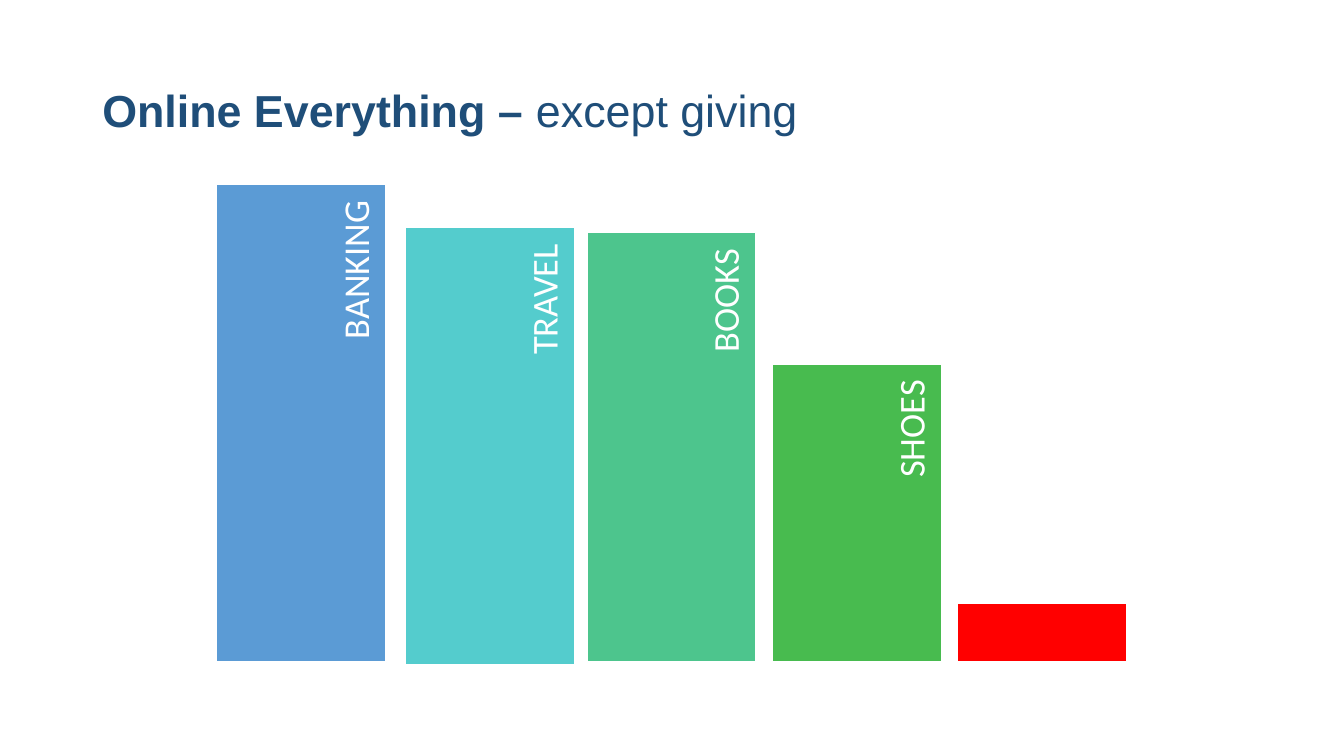
import pptx
import pptx.dml.color
import pptx.enum.shapes
import pptx.enum.text
import pptx.util

Pt = pptx.util.Pt
RGBColor = pptx.dml.color.RGBColor
MSO_SHAPE = pptx.enum.shapes.MSO_SHAPE
MSO_ANCHOR = pptx.enum.text.MSO_ANCHOR
PP_ALIGN = pptx.enum.text.PP_ALIGN

NAVY = RGBColor(0x1F, 0x4E, 0x79)
WHITE = RGBColor(0xFF, 0xFF, 0xFF)
BLUE = RGBColor(0x5B, 0x9B, 0xD5)
TURQUOISE = RGBColor(0x54, 0xCC, 0xCD)
MINT = RGBColor(0x4D, 0xC5, 0x8D)
GREEN = RGBColor(0x48, 0xBB, 0x4F)
RED = RGBColor(0xFF, 0x00, 0x00)

TITLE = [("Online Everything – ", True), ("except giving", False)]

# label, colour, left, top, width, height
BARS = [
    ("", RED, 684, 430.6, 121, 42.4),
    ("SHOES", GREEN, 551.5, 260, 121, 213),
    ("BOOKS", MINT, 419.8, 166.3, 120, 306.7),
    ("TRAVEL", TURQUOISE, 289.4, 162.7, 121, 311.8),
    ("BANKING", BLUE, 154.8, 131.8, 121, 341.2),
]

LABEL_THICKNESS = 31.5
LABEL_INSET = 19  # from the right edge of a bar to the label's centre line
LABEL_SHARE = 0.9  # label length as a share of the bar height


def add_text(slide, runs, left, top, width, height, *, size, font, color,
             align=PP_ALIGN.LEFT, margins=(7.2, 3.6, 7.2, 3.6), rotation=0):
    """Add a one-paragraph box; runs are (text, bold) pairs."""
    box = slide.shapes.add_textbox(Pt(left), Pt(top), Pt(width), Pt(height))
    box.rotation = rotation
    frame = box.text_frame
    frame.word_wrap = True
    frame.vertical_anchor = MSO_ANCHOR.MIDDLE
    (frame.margin_left, frame.margin_top,
     frame.margin_right, frame.margin_bottom) = map(Pt, margins)
    paragraph = frame.paragraphs[0]
    paragraph.alignment = align
    paragraph.line_spacing = 0.9
    for text, bold in runs:
        run = paragraph.add_run()
        run.text = text
        run.font.bold = bold
        run.font.size = Pt(size)
        run.font.name = font
        run.font.color.rgb = color


def add_bar(slide, label, color, left, top, width, height):
    bar = slide.shapes.add_shape(
        MSO_SHAPE.RECTANGLE, Pt(left), Pt(top), Pt(width), Pt(height))
    bar.shadow.inherit = False
    bar.fill.solid()
    bar.fill.fore_color.rgb = color
    bar.line.color.rgb = WHITE
    bar.line.width = Pt(1)
    if label:
        length = LABEL_SHARE * height
        center_x = left + width - LABEL_INSET
        center_y = top + length / 2
        add_text(slide, [(label, False)],
                 center_x - length / 2, center_y - LABEL_THICKNESS / 2,
                 length, LABEL_THICKNESS,
                 size=26, font="Calibri", color=WHITE, align=PP_ALIGN.RIGHT,
                 margins=(8, 0, 11.5, 3), rotation=270)


def main():
    presentation = pptx.Presentation()
    presentation.slide_width = Pt(960)
    presentation.slide_height = Pt(540)
    slide = presentation.slides.add_slide(presentation.slide_layouts[6])
    add_text(slide, TITLE, 66, 28.8, 828, 104.4,
             size=32, font="Arial", color=NAVY)
    for bar in BARS:
        add_bar(slide, *bar)
    presentation.save("out.pptx")


if __name__ == "__main__":
    main()
